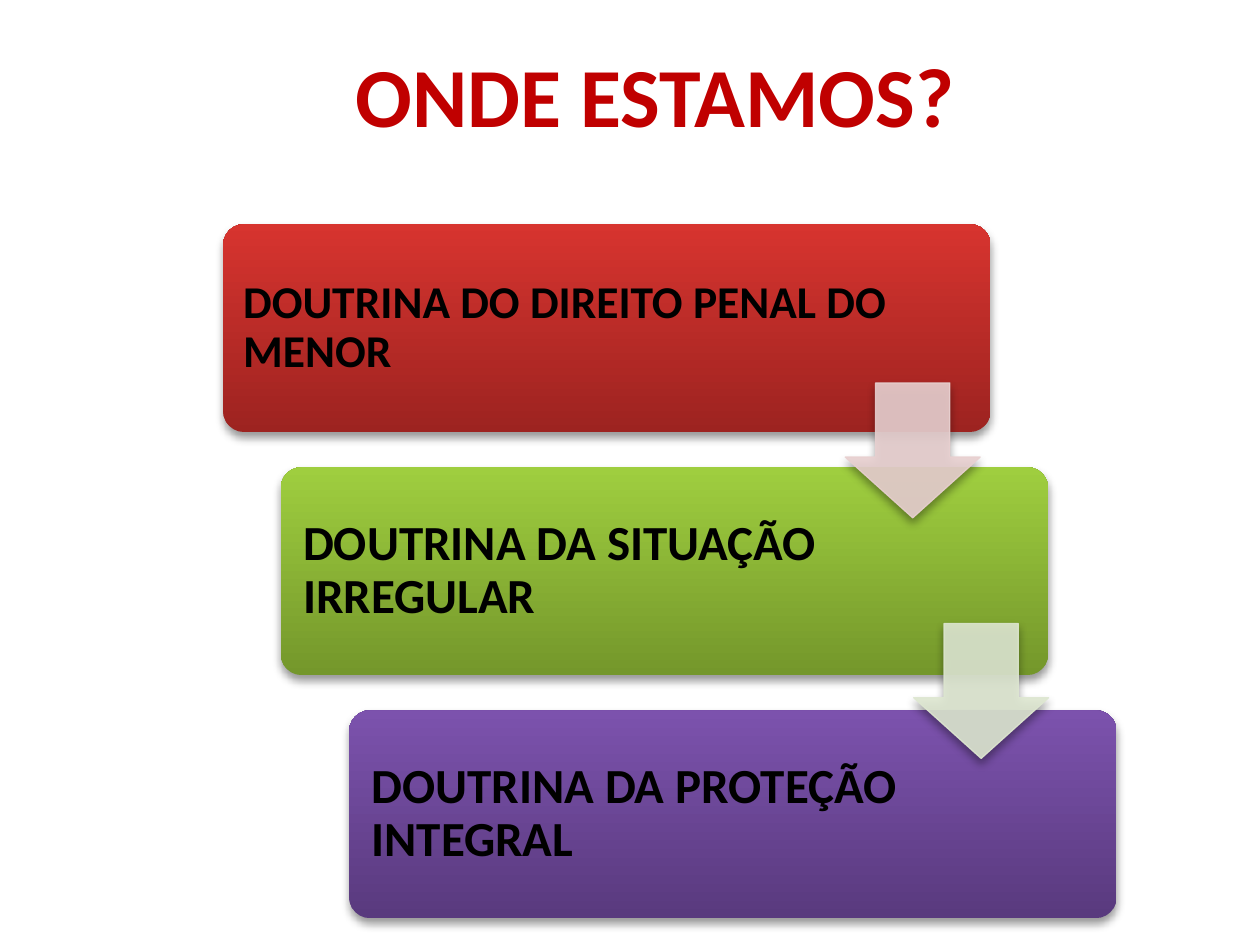
from lxml import etree
from pptx import Presentation
from pptx.dml.color import RGBColor
from pptx.enum import shapes, text
from pptx.oxml.ns import qn
from pptx.util import Cm, Pt

BLACK = RGBColor(0x00, 0x00, 0x00)
TITLE_RED = RGBColor(0xC0, 0x00, 0x00)
RED = (RGBColor(0x9D, 0x23, 0x20), RGBColor(0xD7, 0x34, 0x2F))
GREEN = (RGBColor(0x74, 0x97, 0x2B), RGBColor(0x9F, 0xCE, 0x3F))
PURPLE = (RGBColor(0x59, 0x3A, 0x7E), RGBColor(0x7C, 0x52, 0xAD))
PALE_RED = RGBColor(0xE8, 0xD0, 0xD0)
PALE_GREEN = RGBColor(0xDE, 0xE7, 0xD1)

STEP_TOP, STEP_PITCH = 4.52, 4.9
ARROW_TOP, ARROW_PITCH = 7.72, 4.85

DOCTRINES = [
    ("DOUTRINA DO DIREITO PENAL DO MENOR", 4.5, RED, 26, 0.28, 9.1),
    ("DOUTRINA DA SITUAÇÃO IRREGULAR", 5.66, GREEN, 28, 0.33, 11.2),
    ("DOUTRINA DA PROTEÇÃO INTEGRAL", 7.04, PURPLE, 28, 0.33, 11.2),
]
TRANSITIONS = [(17.04, PALE_RED), (18.42, PALE_GREEN)]


def set_alpha(color_element, percent):
    """Make a colour element partly transparent."""
    etree.SubElement(color_element, qn("a:alpha"), val=str(percent * 1000))


def fill_shadow(effects):
    """Put a soft downward shadow into an effect list."""
    shadow = etree.SubElement(
        effects, qn("a:outerShdw"), blurRad=str(Pt(5.2)), dist=str(Pt(3)),
        dir="5400000", rotWithShape="0")
    set_alpha(etree.SubElement(shadow, qn("a:srgbClr"), val=str(BLACK)), 40)


def write(frame, words, size, color, align, margins, anchor,
          spacing=None, after=None, shadow=False):
    """Write one bold formatted paragraph into a text frame."""
    frame.word_wrap = True
    frame.vertical_anchor = anchor
    frame.margin_left = frame.margin_right = Cm(margins[0])
    frame.margin_top = frame.margin_bottom = Cm(margins[1])
    paragraph = frame.paragraphs[0]
    paragraph.alignment = align
    if spacing:
        paragraph.line_spacing = spacing
    if after:
        paragraph.space_after = Pt(after)
    run = paragraph.add_run()
    run.text = words
    run.font.name, run.font.size, run.font.bold = "Calibri", Pt(size), True
    run.font.color.rgb = color
    if shadow:
        effects = etree.Element(qn("a:effectLst"))
        fill_shadow(effects)
        run.font.fill._xPr.find(qn("a:solidFill")).addnext(effects)


def add_shadowed(slide, kind, left, top, width, height, adjustments):
    """Add a preset shape with a soft shadow."""
    figure = slide.shapes.add_shape(
        kind, Cm(left), Cm(top), Cm(width), Cm(height))
    for index, value in enumerate(adjustments):
        figure.adjustments[index] = value
    figure.shadow.inherit = False
    fill_shadow(figure.element.spPr.find(qn("a:effectLst")))
    return figure


def add_doctrine(slide, top, words, left, shades, size, margin, after):
    """Add one gradient step with its doctrine."""
    step = add_shadowed(slide, shapes.MSO_SHAPE.ROUNDED_RECTANGLE,
                        left, top, 15.47, 4.19, [0.1])
    step.fill.gradient()
    step.fill.gradient_angle = 90
    for stop, shade in zip(step.fill.gradient_stops, shades):
        stop.color.rgb = shade
    step.line.fill.background()
    write(step.text_frame, words, size, BLACK, text.PP_ALIGN.LEFT,
          (margin, margin), text.MSO_ANCHOR.MIDDLE, spacing=0.9, after=after)


def add_transition(slide, top, left, color):
    """Add a translucent arrow between two steps."""
    arrow = add_shadowed(slide, shapes.MSO_SHAPE.DOWN_ARROW,
                         left, top, 2.72, 2.72, [0.55, 0.45])
    arrow.fill.solid()
    arrow.fill.fore_color.rgb = color
    arrow.line.color.rgb = color
    arrow.line.width = Pt(0.75)
    for color_element in arrow.element.spPr.findall(
            ".//" + qn("a:solidFill") + "/" + qn("a:srgbClr")):
        set_alpha(color_element, 90)


def add_title(slide, words):
    """Place and format the slide title."""
    title = slide.shapes.title
    title.left, title.top = Cm(3.3), Cm(0.74)
    title.width, title.height = Cm(19.81), Cm(2.29)
    write(title.text_frame, words, 48, TITLE_RED, text.PP_ALIGN.CENTER,
          (0.25, 0.13), text.MSO_ANCHOR.TOP, shadow=True)


def main():
    """Build and save the slide."""
    deck = Presentation()
    deck.slide_width, deck.slide_height = Cm(25.4), Cm(19.05)
    slide = deck.slides.add_slide(deck.slide_layouts[5])
    add_title(slide, "ONDE ESTAMOS?")
    for index, doctrine in enumerate(DOCTRINES):
        add_doctrine(slide, STEP_TOP + index * STEP_PITCH, *doctrine)
    for index, transition in enumerate(TRANSITIONS):
        add_transition(slide, ARROW_TOP + index * ARROW_PITCH, *transition)
    deck.save("out.pptx")


if __name__ == "__main__":
    main()
